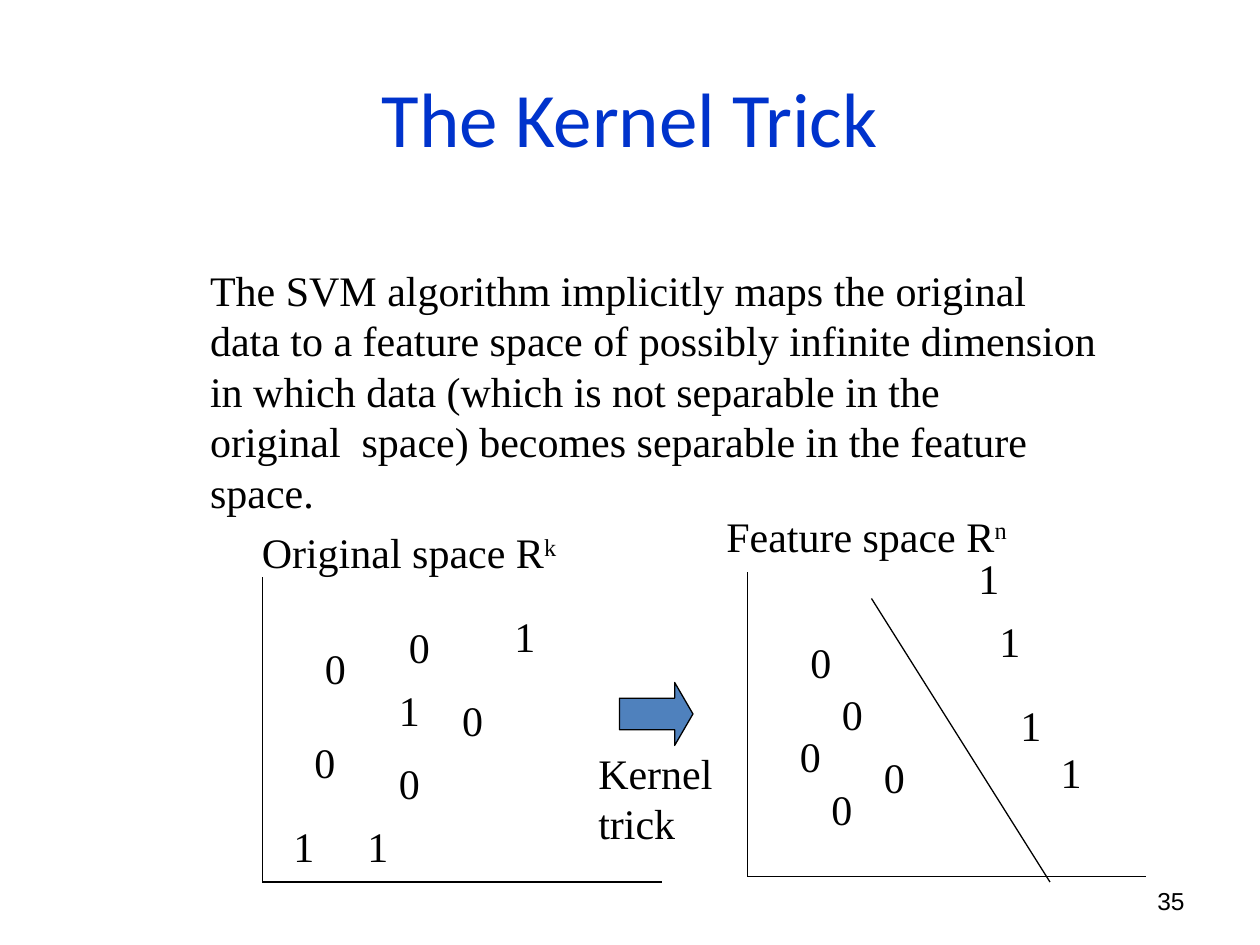
from pptx import Presentation
from pptx.enum.shapes import MSO_CONNECTOR as LINE, MSO_SHAPE as SHAPE
from pptx.enum.text import MSO_ANCHOR as ANCHOR, PP_ALIGN as ALIGN
from pptx.dml.color import RGBColor
from pptx.oxml.ns import qn
from pptx.util import Pt
from lxml.etree import SubElement

COLORS = {"ink": "000000", "title": "0033CC", "arrow": "4F81BD"}
BODY = [
    "The SVM algorithm implicitly maps the original",
    "data to a feature space of possibly infinite dimension",
    "in which data (which is not separable in the",
    "original  space) becomes separable in the feature space.",
]
ORIGINAL_POINTS = {
    "0": [(178.5, 363.5), (226.5, 351.5), (172.5, 417.5), (220.8, 429.4), (257, 393.4)],
    "1": [(220.8, 387.5), (160.5, 465.4), (202.8, 465.4), (286.8, 345.5)],
}
FEATURE_POINTS = {
    "0": [(456, 360), (474, 390), (450, 414), (498, 426), (468, 444)],
    "1": [(564, 348), (552, 312), (576, 396), (599, 423)],
}


class Slide:
    """Draws styled elements on one slide, with lengths in points."""

    def __init__(self, prs):
        self.shapes = prs.slides.add_slide(prs.slide_layouts[6]).shapes

    def color(self, name):
        return RGBColor.from_string(COLORS[name])

    def text(self, x, y, w, h, lines, size=24, font="Times New Roman",
             color="ink", align=ALIGN.LEFT, anchor=ANCHOR.TOP, sup="", wrap=True):
        tf = self.shapes.add_textbox(Pt(x), Pt(y), Pt(w), Pt(h)).text_frame
        tf.word_wrap = wrap
        tf.vertical_anchor = anchor
        for i, line in enumerate(lines):
            p = tf.add_paragraph() if i else tf.paragraphs[0]
            p.alignment = align
            for run in filter(None, (line, sup)):
                r = p.add_run()
                r.text = run
                r.font.size = Pt(size)
                r.font.name = font
                r.font.color.rgb = self.color(color)
        if sup:
            r.font._element.set("baseline", "30000")

    def line(self, x1, y1, x2, y2):
        s = self.shapes.add_connector(LINE.STRAIGHT, Pt(x1), Pt(y1), Pt(x2), Pt(y2))
        s.line.color.rgb = self.color("ink")
        s.line.width = Pt(0.75)
        SubElement(s._element.spPr, qn("a:effectLst"))

    def arrow(self, x, y, w, h):
        s = self.shapes.add_shape(SHAPE.RIGHT_ARROW, Pt(x), Pt(y), Pt(w), Pt(h))
        s.adjustments[1] = 0.29
        s.shadow.inherit = False
        s.fill.solid()
        s.fill.fore_color.rgb = self.color("arrow")
        s.line.color.rgb = self.color("ink")
        s.line.width = Pt(0.75)

    def axes(self, x, y, w, h):
        self.line(x, y, x, y + h)
        self.line(x, y + h, x + w, y + h)

    def points(self, groups):
        for digit, places in groups.items():
            for x, y in places:
                self.text(x, y, 26.5, 36, [digit], wrap=False)


def main():
    prs = Presentation()
    prs.slide_width, prs.slide_height = Pt(720), Pt(540)
    s = Slide(prs)
    s.text(36, 21.6, 648, 90, ["The Kernel Trick"], 44, "Calibri", "title",
           ALIGN.CENTER, ANCHOR.MIDDLE)
    s.text(113, 147.6, 537, 152, BODY)

    s.text(142.5, 297.5, 184, 36, ["Original space R"], sup="k", wrap=False)
    s.axes(150, 330, 228, 174)
    s.points(ORIGINAL_POINTS)

    s.arrow(354, 390, 42, 36)
    s.text(334.8, 423.4, 80, 65, ["Kernel", "trick"], wrap=False)

    s.text(408, 288, 176, 36, ["Feature space R"], sup="n", wrap=False)
    s.axes(427, 327, 228, 174)
    s.points(FEATURE_POINTS)
    s.line(498, 342, 600, 504)

    s.text(516, 500.5, 168, 28.8, ["35"], 14, "Arial",
           align=ALIGN.RIGHT, anchor=ANCHOR.MIDDLE)
    prs.save("out.pptx")


if __name__ == "__main__":
    main()
